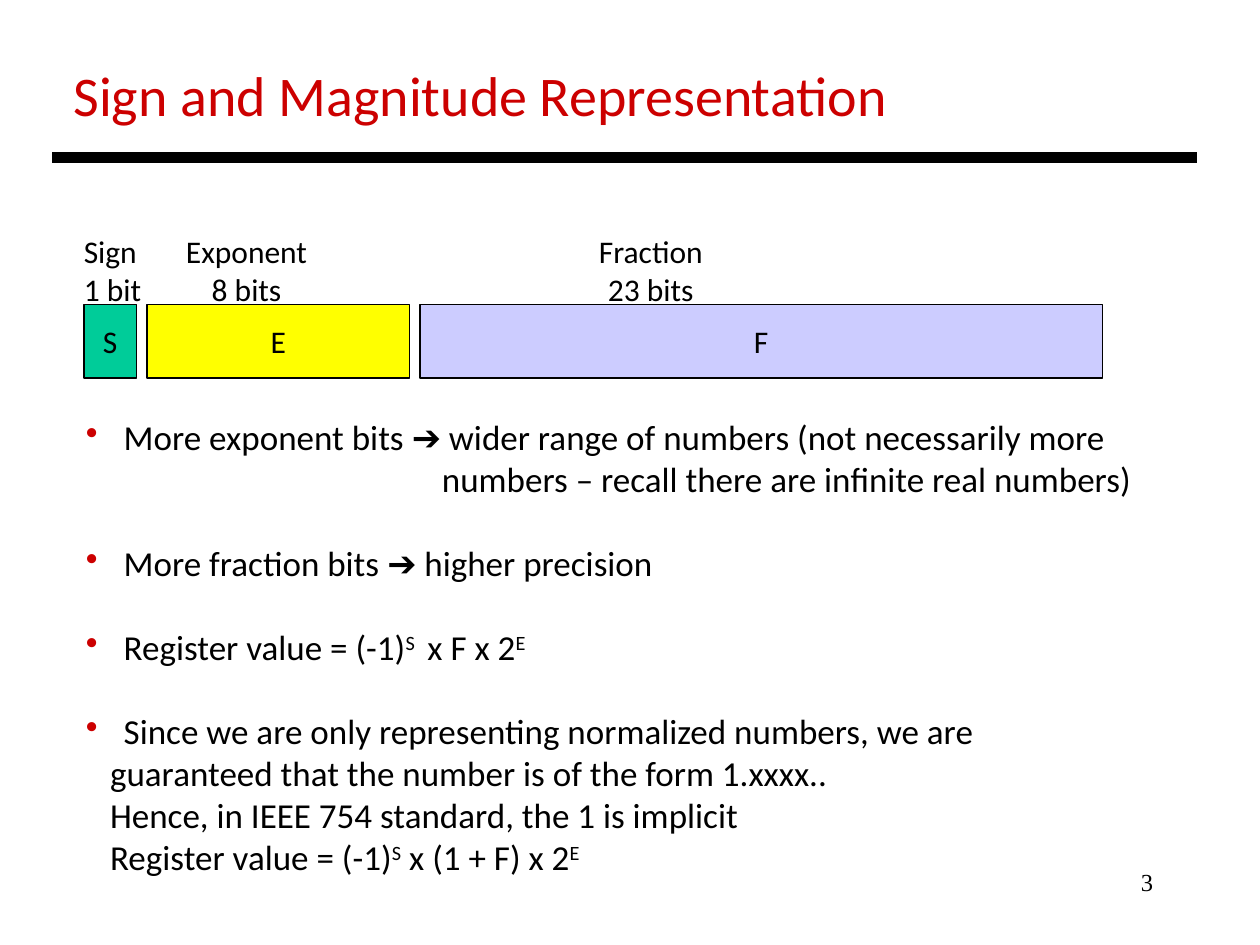
"""Build a slide on the sign, exponent and fraction fields of a floating-point word."""
from typing import NamedTuple, Optional

from pptx import Presentation
from pptx.dml.color import RGBColor
from pptx.enum.shapes import MSO_CONNECTOR as Connector, MSO_SHAPE as Shape
from pptx.enum.text import MSO_ANCHOR as Anchor, PP_ALIGN as Align
from pptx.oxml.ns import qn
from pptx.util import Pt
from lxml.etree import SubElement

PX = 7620
BLACK = RGBColor(0, 0, 0)
WHITE = RGBColor(255, 255, 255)
RED = RGBColor(0xCC, 0, 0)
GREEN = RGBColor(0, 0xCC, 0x99)
YELLOW = RGBColor(0xFF, 0xFF, 0)
LAVENDER = RGBColor(0xCC, 0xCC, 0xFF)
FIELD_TOP, FIELD_HEIGHT = 290, 70
BULLET_INDENT, CONTINUED_INDENT, ASIDE_INDENT = 36, 23, 339


class Area(NamedTuple):
    left: int
    top: int
    width: int
    height: int


class Style(NamedTuple):
    size: int
    color: RGBColor = BLACK
    font: str = "Calibri"


class Field(NamedTuple):
    letter: str
    left: int
    width: int
    fill: RGBColor


class Piece(NamedTuple):
    text: str
    raised: bool = False


class Line(NamedTuple):
    pieces: list[Piece]
    indent: int = BULLET_INDENT
    bullet: bool = True
    gap: int = 24


TITLE, LABEL, BODY = Style(32, RED), Style(18), Style(20)
NUMBER = Style(14, font="Times New Roman")
FIELDS = [
    Field("S", 80, 50, GREEN),
    Field("E", 140, 250, YELLOW),
    Field("F", 400, 650, LAVENDER),
]
LABEL_ROWS = ["Sign\tExponent\tFraction", "1 bit\t8 bits\t23 bits"]
LABEL_TABS = [155, 540]
SIGN, EXPONENT = Piece("S", True), Piece("E", True)
REGISTER = Piece("Register value = (-1)")
POINTS = [
    Line([Piece("More exponent bits ➔ wider range of numbers (not necessarily more")], gap=0),
    Line([Piece("numbers – recall there are infinite real numbers)")], ASIDE_INDENT, False, 0),
    Line([Piece("More fraction bits ➔ higher precision")]),
    Line([REGISTER, Piece("S ", True), Piece(" x F x 2"), EXPONENT]),
    Line([Piece("Since we are only representing normalized numbers, we are")]),
    Line([Piece("guaranteed that the number is of the form 1.xxxx..")], CONTINUED_INDENT, False, 0),
    Line([Piece("Hence, in IEEE 754 standard, the 1 is implicit")], CONTINUED_INDENT, False, 0),
    Line([REGISTER, SIGN, Piece(" x (1 + F) x 2"), EXPONENT], CONTINUED_INDENT, False, 0),
]


def scaled(area: Area) -> list[int]:
    """Turn an area in px into EMU."""
    return [length * PX for length in area]


def add_span(para, piece: Piece, style: Style) -> None:
    """Add one run of text."""
    span = para.add_run()
    span.text = piece.text
    span.font.size = Pt(style.size)
    span.font.name = style.font
    span.font.color.rgb = style.color
    if piece.raised:
        span.font._element.set("baseline", "30000")


def add_box(page, area: Area):
    """Add an empty wrapping text box and return its frame."""
    frame = page.shapes.add_textbox(*scaled(area)).text_frame
    frame.word_wrap = True
    return frame


def add_text(page, area: Area, text: str, style: Style, align: Optional[Align] = None) -> None:
    """Add a text box of a single line."""
    para = add_box(page, area).paragraphs[0]
    para.alignment = align
    add_span(para, Piece(text), style)


def next_para(frame, index: int):
    """Return the first paragraph, or a new one after it."""
    return frame.add_paragraph() if index else frame.paragraphs[0]


def add_labels(page, area: Area) -> None:
    """Add the field names and widths, centred on tab stops."""
    frame = add_box(page, area)
    for index, row in enumerate(LABEL_ROWS):
        para = next_para(frame, index)
        stops = SubElement(para._p.get_or_add_pPr(), qn("a:tabLst"))
        for position in LABEL_TABS:
            SubElement(stops, qn("a:tab"), pos=str(position * PX), algn="ctr")
        add_span(para, Piece(row), LABEL)


def add_field(page, field: Field) -> None:
    """Add one field of the word as a lettered rectangle."""
    area = Area(field.left, FIELD_TOP, field.width, FIELD_HEIGHT)
    box = page.shapes.add_shape(Shape.RECTANGLE, *scaled(area))
    box.shadow.inherit = False
    box.fill.solid()
    box.fill.fore_color.rgb = field.fill
    box.line.color.rgb = BLACK
    box.line.width = Pt(0.75)
    frame = box.text_frame
    frame.word_wrap = False
    frame.vertical_anchor = Anchor.MIDDLE
    para = frame.paragraphs[0]
    para.alignment = Align.CENTER
    add_span(para, Piece(field.letter), LABEL)


def add_points(page, area: Area) -> None:
    """Add the bulleted points and their continuation lines."""
    frame = add_box(page, area)
    for index, line in enumerate(POINTS):
        para = next_para(frame, index)
        para.space_before = Pt(line.gap)
        props = para._p.get_or_add_pPr()
        props.set("marL", str(line.indent * PX))
        props.set("indent", str(-line.indent * PX if line.bullet else 0))
        if line.bullet:
            color = SubElement(props, qn("a:buClr"))
            SubElement(color, qn("a:srgbClr"), val=str(RED))
            SubElement(props, qn("a:buChar"), char="•")
        for piece in line.pieces:
            add_span(para, piece, BODY)


def add_rule(page, left: int, right: int, top: int) -> None:
    """Add the thick line under the title."""
    ends = [length * PX for length in (left, top, right, top)]
    rule = page.shapes.add_connector(Connector.STRAIGHT, *ends)
    rule.line.color.rgb = BLACK
    rule.line.width = Pt(6)
    SubElement(rule._element.spPr, qn("a:effectLst"))


def main() -> None:
    """Build and save the deck."""
    deck = Presentation()
    deck.slide_width, deck.slide_height = 1200 * PX, 900 * PX
    page = deck.slides.add_slide(deck.slide_layouts[6])
    page.background.fill.solid()
    page.background.fill.fore_color.rgb = WHITE
    add_text(page, Area(860, 820, 250, 60), "3", NUMBER, Align.RIGHT)
    add_text(page, Area(58, 52, 820, 77), "Sign and Magnitude Representation", TITLE)
    add_rule(page, 50, 1140, 150)
    add_labels(page, Area(68, 215, 625, 85))
    for field in FIELDS:
        add_field(page, field)
    add_points(page, Area(70, 390, 1040, 456))
    deck.save("out.pptx")


if __name__ == "__main__":
    main()
